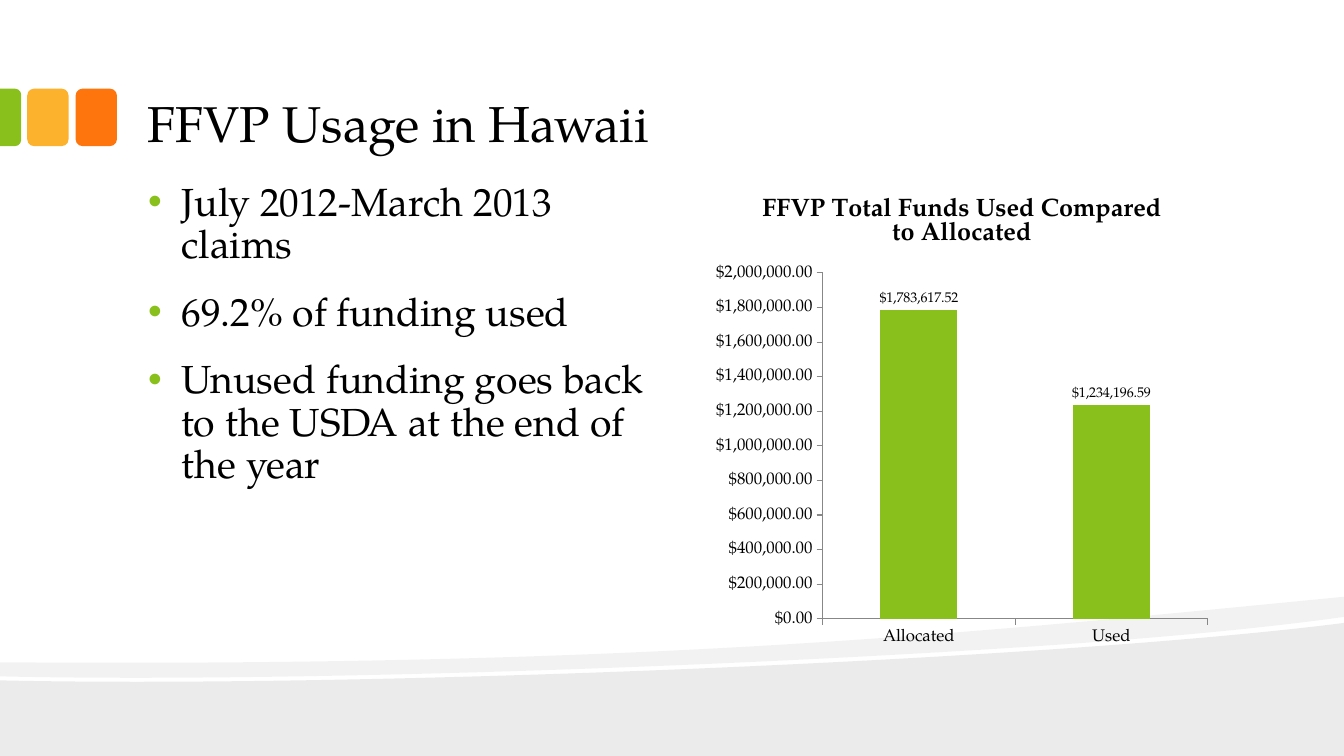
from lxml import etree
from pptx import Presentation
from pptx.chart.data import CategoryChartData
from pptx.dml.color import RGBColor
from pptx.enum.chart import XL_CHART_TYPE, XL_LABEL_POSITION, XL_TICK_MARK
from pptx.enum.shapes import MSO_SHAPE
from pptx.enum.text import MSO_ANCHOR, MSO_AUTO_SIZE, PP_ALIGN
from pptx.oxml.ns import qn
from pptx.util import Inches, Pt

COLUMNS = XL_CHART_TYPE.COLUMN_CLUSTERED
OUTSIDE_END = XL_LABEL_POSITION.OUTSIDE_END
TICK_OUT = XL_TICK_MARK.OUTSIDE
ROUNDED = MSO_SHAPE.ROUNDED_RECTANGLE
ROUNDED_TOP = MSO_SHAPE.ROUND_2_SAME_RECTANGLE
TOP, BOTTOM = MSO_ANCHOR.TOP, MSO_ANCHOR.BOTTOM
LEFT = PP_ALIGN.LEFT
NO_AUTOFIT = MSO_AUTO_SIZE.NONE

FONT = "TeX Gyre Pagella"
COLORS = {
    "text": "000000",
    "wave": "000000",
    "green": "89C01C",
    "yellow": "FCB22C",
    "orange": "FE750E",
    "axis": "878787",
}
DOLLARS = "\\$#,##0.00"


class SlideBuilder:
    def __init__(self, slide):
        self.slide = slide

    def color(self, name):
        return RGBColor.from_string(COLORS[name])

    def style_font(self, font, size, bold=False):
        font.name = FONT
        font.size = Pt(size)
        font.bold = bold
        font.color.rgb = self.color("text")

    def paint(self, shape, color):
        shape.shadow.inherit = False
        shape.fill.solid()
        shape.fill.fore_color.rgb = self.color(color)
        shape.line.fill.background()

    def wave(self, start, segments, opacity):
        points = [(Inches(x), Inches(y)) for segment in segments for x, y in segment]
        builder = self.slide.shapes.build_freeform(*map(Inches, start))
        builder.add_line_segments(points, close=True)
        shape = builder.convert_to_shape()
        self.paint(shape, "wave")
        fill_color = shape.element.spPr.find(qn("a:solidFill"))[0]
        etree.SubElement(fill_color, qn("a:alpha"), val=str(opacity * 1000))

        steps = iter(list(shape.element.iter(qn("a:lnTo"))))
        for segment in segments:
            first, *others = [next(steps) for _ in segment]
            if others:
                first.tag = qn("a:cubicBezTo")
                for step in others:
                    first.append(step[0])
                    step.getparent().remove(step)

    def tab(self, preset, box, color, rotation=0):
        shape = self.slide.shapes.add_shape(preset, *map(Inches, box))
        shape.rotation = rotation
        self.paint(shape, color)
        return shape

    def placeholder(self, index, box, anchor):
        holder = self.slide.placeholders[index]
        holder.left, holder.top, holder.width, holder.height = map(Inches, box)
        holder.element.getparent().append(holder.element)
        frame = holder.text_frame
        frame.word_wrap = True
        frame.auto_size = NO_AUTOFIT
        frame.vertical_anchor = anchor
        frame.margin_left = frame.margin_right = Inches(0.13)
        frame.margin_top = frame.margin_bottom = Inches(0.07)
        return frame

    def title(self, text, box):
        frame = self.placeholder(0, box, BOTTOM)
        frame.text = text
        heading = frame.paragraphs[0]
        heading.alignment = LEFT
        self.style_font(heading.font, 36)

    def bullets(self, items, box):
        frame = self.placeholder(1, box, TOP)
        frame.text = "\n".join(items)
        for position, item in enumerate(frame.paragraphs):
            item.alignment = LEFT
            item.line_spacing = 0.9
            item.space_before = Pt(18 if position else 0)
            properties = item._p.get_or_add_pPr()
            properties.set("marL", str(Inches(0.34)))
            properties.set("indent", str(Inches(-0.33)))
            bullet_color = etree.SubElement(properties, qn("a:buClr"))
            etree.SubElement(bullet_color, qn("a:srgbClr"), val=COLORS["green"])
            etree.SubElement(properties, qn("a:buFont"), typeface="Arial")
            etree.SubElement(properties, qn("a:buChar"), char="•")
            self.style_font(item.font, 28)

    def column_chart(self, title, categories, values, box):
        data = CategoryChartData(number_format=DOLLARS)
        data.categories = categories
        data.add_series("Series 1", values)
        chart = self.slide.shapes.add_chart(COLUMNS, *map(Inches, box), data).chart
        self.style_font(chart.font, 10)
        chart.has_legend = False
        chart.has_title = True
        chart.chart_title.include_in_layout = False
        chart.chart_title.text_frame.text = title
        self.style_font(chart.chart_title.text_frame.paragraphs[0].font, 18, bold=True)

        for axis in (chart.category_axis, chart.value_axis):
            axis.has_major_gridlines = False
            axis.major_tick_mark = TICK_OUT
            axis.format.line.color.rgb = self.color("axis")
            self.style_font(axis.tick_labels.font, 12)
        amounts = chart.value_axis
        amounts.tick_labels.number_format = DOLLARS
        amounts.tick_labels.number_format_is_linked = False

        plot = chart.plots[0]
        plot.vary_by_categories = False
        plot.gap_width = 150
        funds = plot.series[0]
        funds.format.fill.solid()
        funds.format.fill.fore_color.rgb = self.color("green")
        labels = funds.data_labels
        labels.show_value = True
        labels.position = OUTSIDE_END
        labels.number_format = DOLLARS
        labels.number_format_is_linked = False
        self.style_font(labels.font, 10)


def main():
    presentation = Presentation()
    presentation.slide_width = Inches(13.33)
    presentation.slide_height = Inches(7.5)
    builder = SlideBuilder(presentation.slides.add_slide(presentation.slide_layouts[1]))

    lower_wave = [
        [(13.33, 7.5)],
        [(0, 7.5)],
        [(0, 6.75)],
        [(3.52, 6.83), (10.42, 6.55), (13.33, 6.18)],
    ]
    upper_wave = [
        [(13.33, 6.12)],
        [(12.55, 6.23), (11.49, 6.33), (10.29, 6.41)],
        [(6.98, 6.63), (2.58, 6.77), (0, 6.71)],
        [(0, 6.57)],
        [(6.52, 6.62), (9.71, 6.27), (13.33, 5.92)],
    ]
    builder.wave((13.33, 6.18), lower_wave, 8)
    builder.wave((13.33, 5.92), upper_wave, 5)

    builder.tab(ROUNDED, (0.75, 0.88, 0.41, 0.57), "orange")
    builder.tab(ROUNDED, (0.27, 0.88, 0.41, 0.57), "yellow")
    edge_tab = builder.tab(ROUNDED_TOP, (-0.18, 1.06, 0.57, 0.21), "green", rotation=90)
    edge_tab.adjustments[0] = 0.29

    builder.title("FFVP Usage in Hawaii", (1.33, 0.16, 10.66, 1.42))
    builder.bullets(
        [
            "July 2012-March 2013 claims",
            "69.2% of funding used",
            "Unused funding goes back to the USDA at the end of the year",
        ],
        (1.33, 1.74, 5.33, 5),
    )
    builder.column_chart(
        "FFVP Total Funds Used Compared to Allocated",
        ["Allocated", "Used"],
        [1783617.52, 1234196.59],
        (7, 1.75, 5.08, 4.75),
    )
    presentation.save("out.pptx")


if __name__ == "__main__":
    main()
